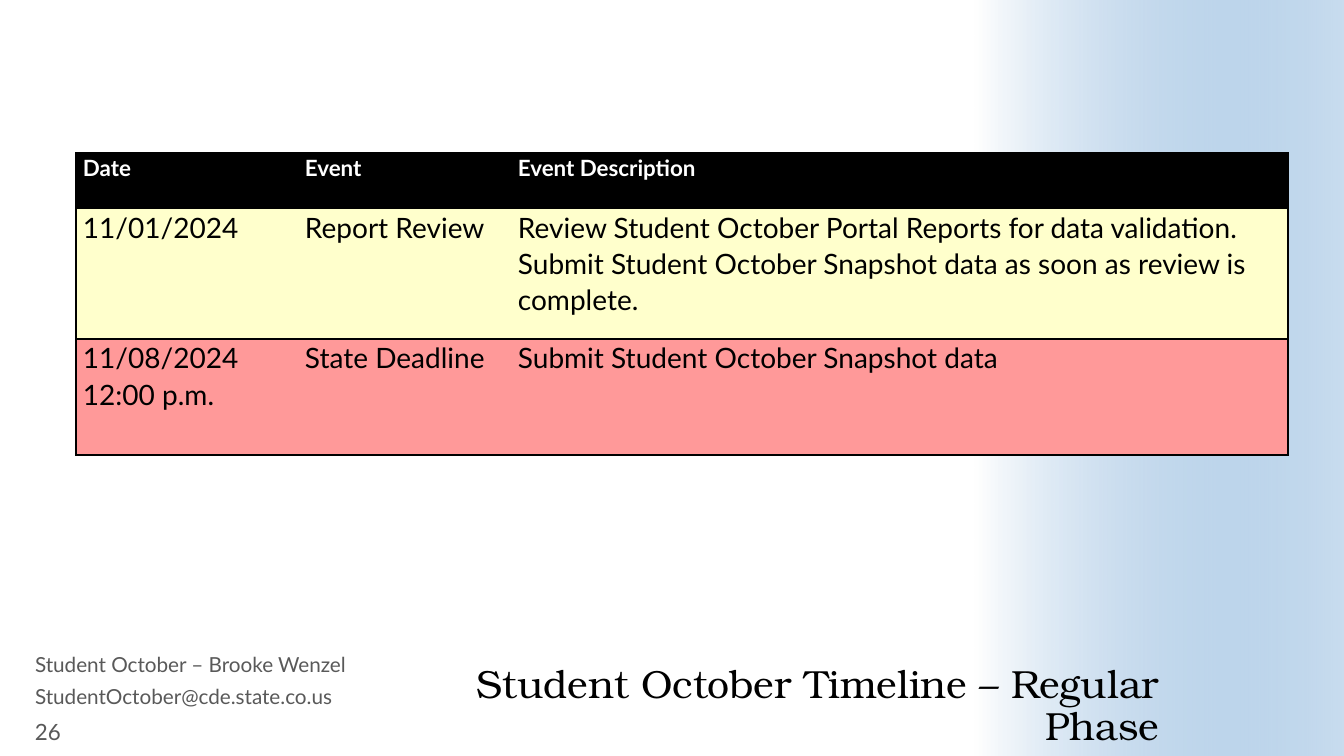
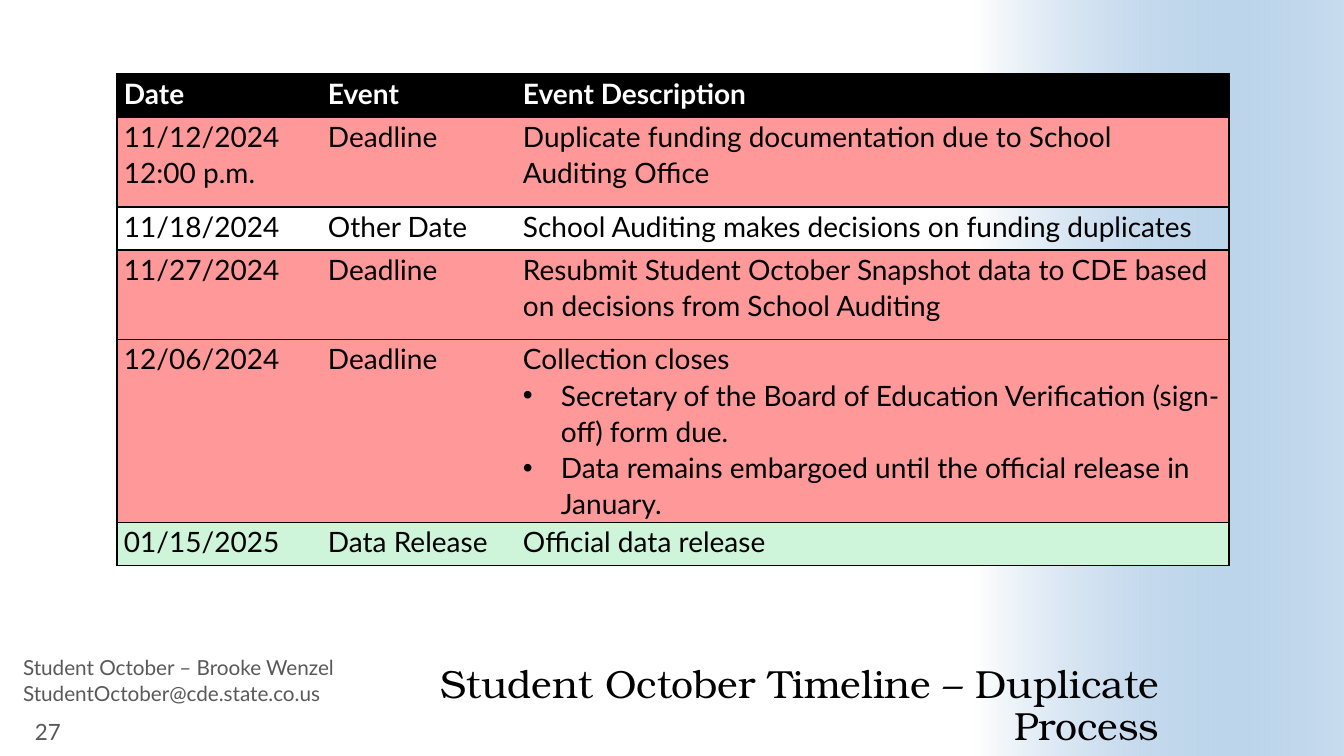
from lxml.etree import SubElement
from pptx import Presentation
from pptx.dml.color import RGBColor
from pptx.enum.shapes import MSO_SHAPE
from pptx.enum.text import MSO_ANCHOR, MSO_AUTO_SIZE, PP_ALIGN
from pptx.oxml.ns import qn
from pptx.util import Emu, Pt

PIXEL = 914400 / 100.8
WIDTH, HEIGHT = 1344, 756
BODY_FONT, TITLE_FONT = "Lato", "TeX Gyre Bonum"
BLACK, WHITE, GRAY, BLUE = "000000", "FFFFFF", "595959", "488BC9"
REVIEW, DEADLINE, RELEASE, OTHER = "FFFFCC", "FF9999", "CEF4DA", None
HEADINGS = ("Date", "Event", "Event Description")
CONTACT = ("Student October – Brooke Wenzel", "StudentOctober@cde.state.co.us")

TIMELINES = [
    {
        "title": "Student October Timeline – Regular Phase",
        "number": "26",
        "contact": [(25, 652), (25, 684)],
        "origin": (76, 153),
        "columns": (222, 213, 777),
        "heights": (55, 131, 116),
        "heading_size": 16,
        "events": [
            (REVIEW, "11/01/2024", "Report Review",
             "Review Student October Portal Reports for data validation. "
             "Submit Student October Snapshot data as soon as review is complete."),
            (DEADLINE, "11/08/2024\n12:00 p.m.", "State Deadline",
             "Submit Student October Snapshot data"),
        ],
    },
    {
        "title": "Student October Timeline – Duplicate Process",
        "number": "27",
        "contact": [(13, 655), (13, 681)],
        "origin": (117, 74),
        "columns": (204, 195, 713),
        "heights": (43, 90, 43, 90, 183, 43),
        "heading_size": 20,
        "events": [
            (DEADLINE, "11/12/2024\n12:00 p.m.", "Deadline",
             "Duplicate funding documentation due to School Auditing Office"),
            (OTHER, "11/18/2024", "Other Date",
             "School Auditing makes decisions on funding duplicates"),
            (DEADLINE, "11/27/2024", "Deadline",
             "Resubmit Student October Snapshot data to CDE based on decisions "
             "from School Auditing"),
            (DEADLINE, "12/06/2024", "Deadline",
             "Collection closes\n"
             "Secretary of the Board of Education Verification (sign-off) form due.\n"
             "Data remains embargoed until the official release in January."),
            (RELEASE, "01/15/2025", "Data Release", "Official data release"),
        ],
    },
]


def px(length):
    """Turn pixels into EMU."""
    return Emu(round(length * PIXEL))


def color(value):
    """Turn a hex string into a colour."""
    return RGBColor.from_string(value)


def place(shape, left, top, width, height):
    """Move and size a shape in pixels."""
    shape.left, shape.top = px(left), px(top)
    shape.width, shape.height = px(width), px(height)


def style_text(frame, size, ink, font=BODY_FONT, bold=False, spacing=1.0):
    """Format every run of a text frame alike."""
    for para in frame.paragraphs:
        para.line_spacing = spacing
        para.space_before = Pt(0)
        for span in para.runs:
            span.font.name = font
            span.font.size = Pt(size)
            span.font.bold = bold
            span.font.color.rgb = color(ink)


def set_bullet(para, indent, mark=None):
    """Give a paragraph a hanging bullet, or none."""
    properties = para._p.get_or_add_pPr()
    properties.set("marL", str(px(indent)))
    properties.set("indent", str(-px(indent)))
    if mark:
        SubElement(properties, qn("a:buFont"), typeface="Arial")
        SubElement(properties, qn("a:buChar"), char=mark)
    else:
        SubElement(properties, qn("a:buNone"))


def add_band(page, layout, left, top, width, height):
    """Draw the fading side band and hand it to the layout."""
    band = page.shapes.add_shape(
        MSO_SHAPE.RECTANGLE, px(left), px(top), px(width), px(height))
    band.shadow.inherit = False
    band.line.fill.background()
    band.fill.gradient()
    band.fill.gradient_angle = 0
    for stop, position, value in zip(band.fill.gradient_stops, (0, 1), (WHITE, BLUE)):
        stop.position = position
        stop.color.rgb = color(value)
    blue = list(band.element.iter(qn("a:srgbClr")))[-1]
    SubElement(blue, qn("a:alpha"), val="30000")
    layout.shapes.element.append(band.element)


def fill_title(title, text, left, top, width, height):
    """Place the right-aligned title."""
    place(title, left, top, width, height)
    frame = title.text_frame
    frame.text = text
    frame.word_wrap = True
    frame.auto_size = MSO_AUTO_SIZE.NONE
    frame.vertical_anchor = MSO_ANCHOR.BOTTOM
    frame.margin_left = frame.margin_right = 0
    frame.margin_top = frame.margin_bottom = 0
    frame.paragraphs[0].alignment = PP_ALIGN.RIGHT
    style_text(frame, 28, BLACK, TITLE_FONT, spacing=0.9)


def fill_contact(holder, text, left, top, width, height):
    """Place one line of the contact footer."""
    place(holder, left, top, width, height)
    frame = holder.text_frame
    frame.text = text
    frame.auto_size = MSO_AUTO_SIZE.NONE
    frame.vertical_anchor = MSO_ANCHOR.TOP
    set_bullet(frame.paragraphs[0], 0)
    style_text(frame, 14.8, GRAY, spacing=0.8)


def add_number(page, text, left, top, width, height):
    """Write the page number."""
    box = page.shapes.add_textbox(px(left), px(top), px(width), px(height))
    frame = box.text_frame
    frame.word_wrap = True
    frame.vertical_anchor = MSO_ANCHOR.MIDDLE
    frame.text = text
    style_text(frame, 16, GRAY)


def set_borders(cell, visible):
    """Rule the named sides of a cell and clear the others."""
    properties = cell._tc.get_or_add_tcPr()
    for order, side in enumerate("LRTB"):
        line = SubElement(properties, qn("a:ln" + side), w=str(Pt(1)))
        if side in visible:
            fill = SubElement(line, qn("a:solidFill"))
            SubElement(fill, qn("a:srgbClr"), val=BLACK)
        else:
            SubElement(line, qn("a:noFill"))
        properties.insert(order, line)


def fill_cell(cell, text, fill, ink, size, bold, sides):
    """Write and colour one table cell."""
    cell.margin_left = cell.margin_right = px(7)
    cell.margin_top = cell.margin_bottom = 0
    cell.text_frame.text = text
    style_text(cell.text_frame, size, ink, bold=bold, spacing=1.07)
    if fill:
        cell.fill.solid()
        cell.fill.fore_color.rgb = color(fill)
    else:
        cell.fill.background()
    set_borders(cell, sides)


def add_timeline(page, timeline):
    """Build the table of dates and events."""
    left, top = timeline["origin"]
    columns, heights = timeline["columns"], timeline["heights"]
    frame = page.shapes.add_table(
        len(heights), len(columns), px(left), px(top),
        px(sum(columns)), px(sum(heights)))
    table = frame.table
    table.horz_banding = False
    for column, width in zip(table.columns, columns):
        column.width = px(width)
    for row, height in zip(table.rows, heights):
        row.height = px(height)
    rows = [(BLACK, *HEADINGS), *timeline["events"]]
    for row_index, (fill, *texts) in enumerate(rows):
        heading = row_index == 0
        ink = WHITE if heading else BLACK
        size = timeline["heading_size"] if heading else 20
        for column_index, (text, sides) in enumerate(zip(texts, ("LTB", "TB", "RTB"))):
            cell = table.cell(row_index, column_index)
            fill_cell(cell, text, fill, ink, size, heading, sides)
        for para in table.cell(row_index, 2).text_frame.paragraphs[1:]:
            set_bullet(para, 38, "•")


def build_page(page, timeline):
    """Fill one timeline slide."""
    title, *holders = page.placeholders
    fill_title(title, timeline["title"], 429, 650, 730, 99)
    for holder, text, (left, top) in zip(holders, CONTACT, timeline["contact"]):
        fill_contact(holder, text, left, top, 392, 31)
    add_number(page, timeline["number"], 25, 716, 86, 31)
    add_timeline(page, timeline)


def main():
    """Build and save the deck."""
    deck = Presentation()
    deck.slide_width, deck.slide_height = px(WIDTH), px(HEIGHT)
    layout = deck.slide_layouts.get_by_name("Two Content")
    pages = [deck.slides.add_slide(layout) for _ in TIMELINES]
    add_band(pages[0], layout, 975, 0, 369, HEIGHT)
    for page, timeline in zip(pages, TIMELINES):
        build_page(page, timeline)
    deck.save("out.pptx")


if __name__ == "__main__":
    main()
